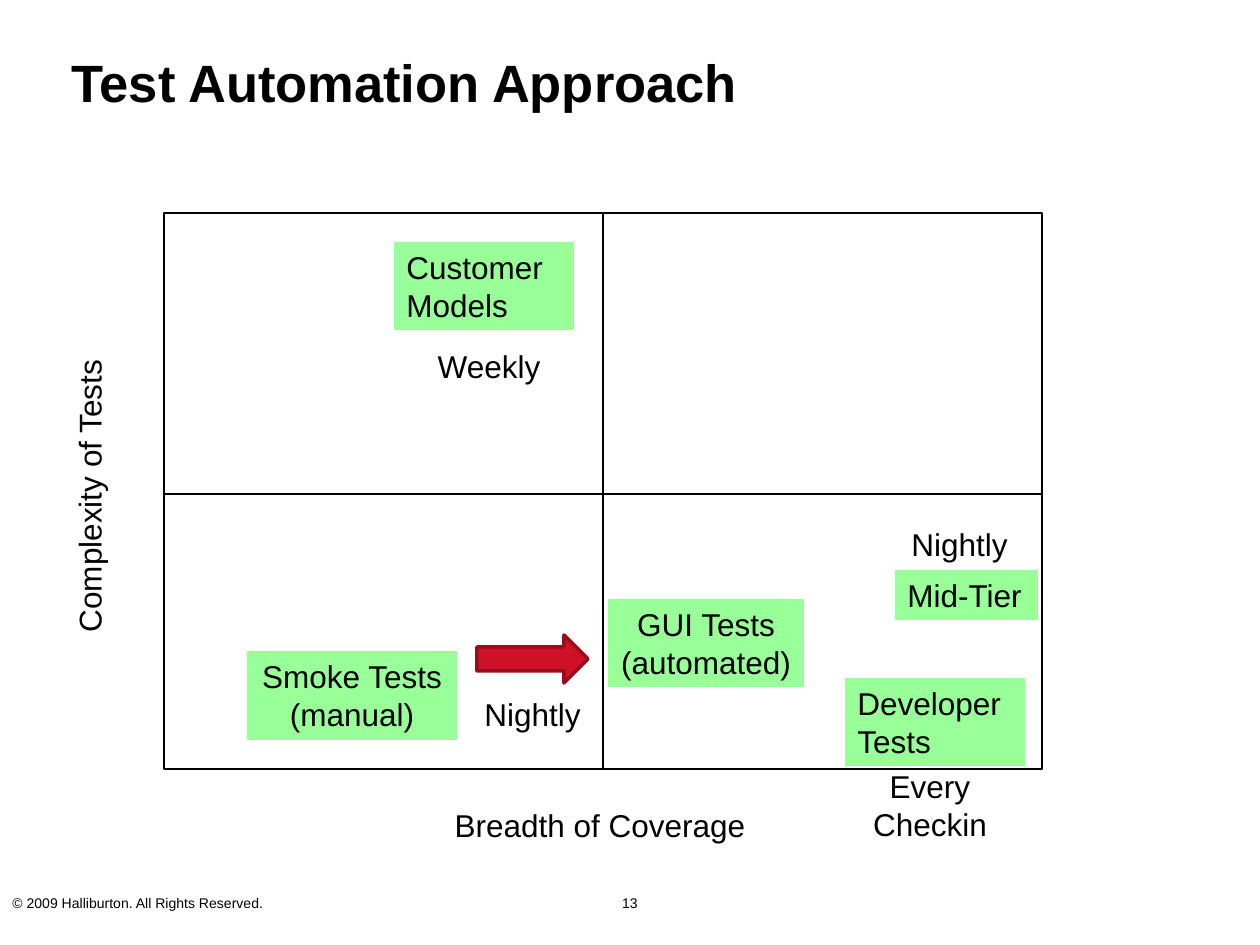
from pptx import Presentation
from pptx.dml.color import RGBColor
from pptx.enum.shapes import MSO_CONNECTOR as Link, MSO_SHAPE as Kind
from pptx.enum.text import MSO_ANCHOR as Anchor, PP_ALIGN as Align
from pptx.oxml.ns import qn
from pptx.util import Emu, Pt
from lxml.etree import SubElement

BLACK = RGBColor(0x00, 0x00, 0x00)
GREEN = RGBColor(0x99, 0xFF, 0x99)
RED = RGBColor(0xCE, 0x11, 0x26)
MAROON = RGBColor(0x98, 0x0D, 0x1C)
FONT = "Arial"
SCALE = 914400 / 126


def px(*nums):
    return [Emu(round(n * SCALE)) for n in nums]


class Deck:
    """Holds the style and the current slide."""

    def __init__(self, wide, high):
        self.prs = Presentation()
        self.prs.slide_width, self.prs.slide_height = px(wide, high)
        self.slide = self.prs.slides.add_slide(self.prs.slide_layouts[5])
        self.shapes = self.slide.shapes

    def style(self, shape, text, size, align, bold=False, anchor=Anchor.TOP):
        frame = shape.text_frame
        frame.text = text
        frame.word_wrap = True
        frame.vertical_anchor = anchor
        para = frame.paragraphs[0]
        para.alignment = align
        font = para.runs[0].font
        font.name, font.size, font.bold = FONT, Pt(size), bold
        font.color.rgb = BLACK

    def title(self, text, *box):
        shape = self.shapes.title
        shape.left, shape.top, shape.width, shape.height = px(*box)
        self.style(shape, text, 30, Align.LEFT, True, Anchor.MIDDLE)

    def label(self, text, *box, size=18, align=Align.CENTER, turn=0):
        shape = self.shapes.add_textbox(*px(*box))
        shape.rotation = turn
        self.style(shape, text, size, align)

    def shape(self, kind, *box, fill=None, line=None, width=0.75):
        shape = self.shapes.add_shape(kind, *px(*box))
        shape.shadow.inherit = False
        if fill is None:
            shape.fill.background()
        else:
            shape.fill.solid()
            shape.fill.fore_color.rgb = fill
        if line is None:
            shape.line.fill.background()
        else:
            shape.line.color.rgb = line
            shape.line.width = Pt(width)
        return shape

    def card(self, text, *box, align=Align.LEFT):
        shape = self.shape(Kind.RECTANGLE, *box, fill=GREEN)
        self.style(shape, text, 18, align)

    def rule(self, *ends):
        line = self.shapes.add_connector(Link.STRAIGHT, *px(*ends))
        line.line.color.rgb = BLACK
        line.line.width = Pt(0.75)
        SubElement(line._element.spPr, qn("a:effectLst"))

    def grid(self, left, top, wide, high, split):
        self.shape(Kind.RECTANGLE, left, top, wide, high, line=BLACK)
        mid = left + wide // 2
        self.rule(left, split, left + wide, split)
        self.rule(mid, top, mid, top + high)


def main():
    deck = Deck(1260, 945)
    deck.label("© 2009 Halliburton. All Rights Reserved.", 0, 888, 400, 33,
               size=8, align=Align.LEFT)
    deck.label("13", 483, 888, 294, 38, size=8)
    deck.title("Test Automation Approach", 59, 23, 1138, 118)
    deck.grid(164, 213, 878, 556, 494)
    deck.label("Breadth of Coverage", 423, 800, 354, 50)
    deck.label("Complexity of Tests", -78, 471, 334, 50, turn=270)
    deck.card("Mid-Tier", 895, 570, 143, 50)
    deck.card("Developer Tests", 845, 678, 180, 88)
    deck.card("Customer Models", 394, 242, 180, 88)
    deck.card("GUI Tests (automated)", 608, 599, 196, 88, align=Align.CENTER)
    deck.label("Every Checkin", 840, 761, 180, 88)
    deck.label("Nightly", 413, 689, 180, 50, align=Align.RIGHT)
    deck.label("Nightly", 840, 519, 180, 50, align=Align.RIGHT)
    deck.label("Weekly", 399, 341, 180, 50)
    deck.card("Smoke Tests (manual)", 247, 651, 210, 89, align=Align.CENTER)
    deck.shape(Kind.RIGHT_ARROW, 477, 635, 111, 48, fill=RED, line=MAROON, width=2)
    deck.prs.save("out.pptx")


if __name__ == "__main__":
    main()
